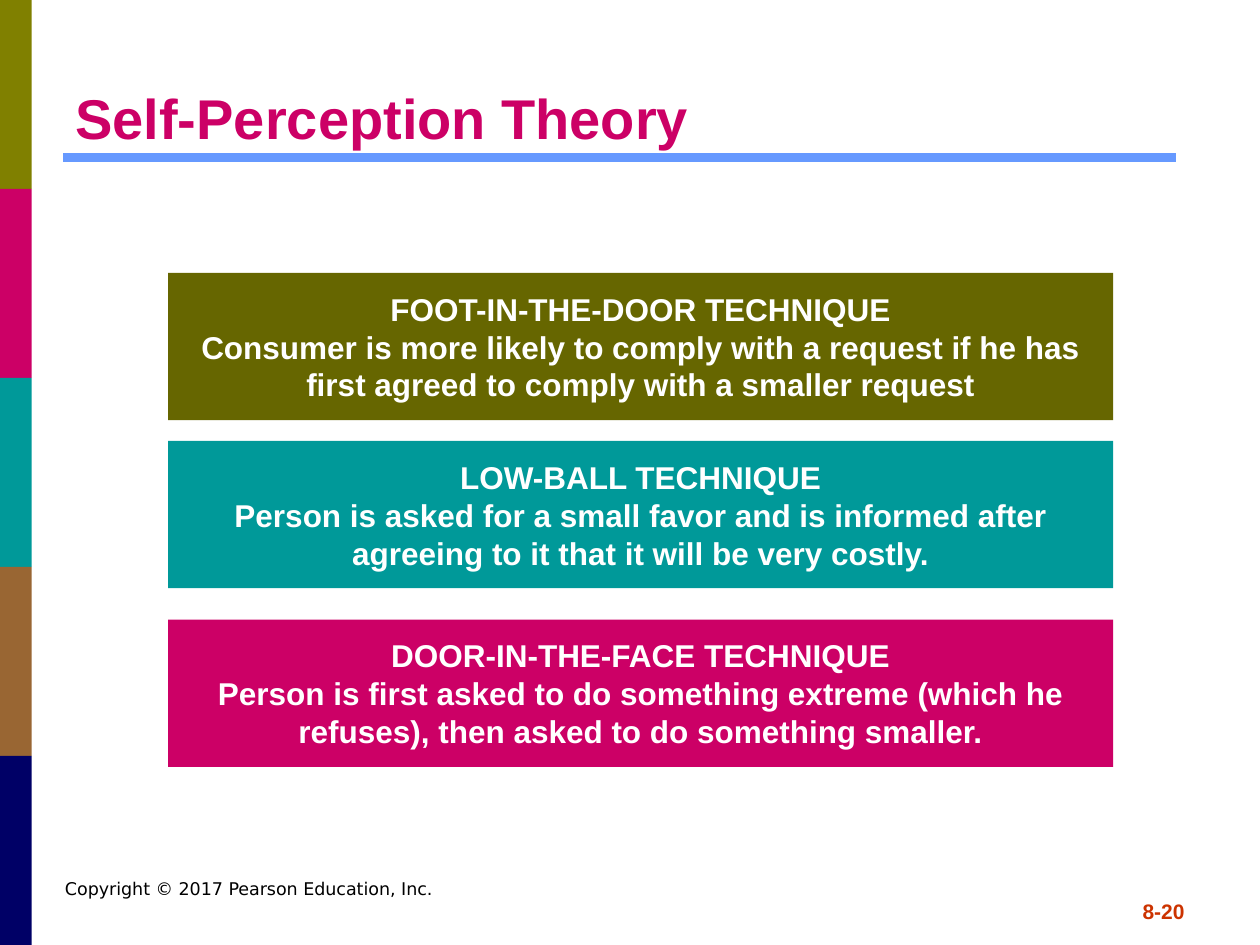
from lxml.etree import SubElement
from pptx import Presentation
from pptx.dml.color import RGBColor
from pptx.enum.shapes import MSO_CONNECTOR as CONN, MSO_SHAPE as SHAPE
from pptx.enum.text import MSO_ANCHOR as ANCHOR, PP_ALIGN as ALIGN
from pptx.oxml.ns import qn
from pptx.util import Cm, Pt

BANDS = ["808000", "CC0066", "009999", "996633", "000066"]
TECHNIQUES = [
    (5.5, "666600", "FOOT-IN-THE-DOOR TECHNIQUE",
     "Consumer is more likely to comply with a request if he has "
     "first agreed to comply with a smaller request"),
    (8.89, "009999", "LOW-BALL TECHNIQUE",
     "Person is asked for a small favor and is informed after "
     "agreeing to it that it will be very costly."),
    (12.49, "CC0066", "DOOR-IN-THE-FACE TECHNIQUE",
     "Person is first asked to do something extreme (which he "
     "refuses), then asked to do something smaller."),
]


def rgb(code):
    """Return the colour for a hex string."""
    return RGBColor.from_string(code)


def write(tf, lines, color, size, align=ALIGN.LEFT, name="Arial", bold=True, **frame):
    """Fill a text frame with one paragraph per line."""
    for key, value in {"word_wrap": True, **frame}.items():
        setattr(tf, key, value)
    for i, line in enumerate(lines):
        p = tf.paragraphs[0] if i == 0 else tf.add_paragraph()
        p.alignment = align
        r = p.add_run()
        r.text = line
        for key, value in {"name": name, "size": Pt(size), "bold": bold}.items():
            setattr(r.font, key, value)
        r.font.color.rgb = rgb(color)


def add_block(s, box, color):
    """Add a plain filled rectangle."""
    sp = s.shapes.add_shape(SHAPE.RECTANGLE, *map(Cm, box))
    sp.shadow.inherit = False
    sp.fill.solid()
    sp.fill.fore_color.rgb = rgb(color)
    sp.line.fill.background()
    return sp


def add_label(s, box, text, color, size, **style):
    """Add a text box with a single line."""
    sp = s.shapes.add_textbox(*map(Cm, box))
    write(sp.text_frame, [text], color, size, **style)


def add_rule(s, x1, x2, y, color, width):
    """Add a horizontal line."""
    sp = s.shapes.add_connector(CONN.STRAIGHT, Cm(x1), Cm(y), Cm(x2), Cm(y))
    sp.line.color.rgb = rgb(color)
    sp.line.width = Pt(width)
    SubElement(sp._element.spPr, qn("a:effectLst"))


def add_technique(s, top, color, heading, body):
    """Add a coloured panel with a heading and its description."""
    sp = add_block(s, (3.39, top, 19.05, 2.97), color)
    write(sp.text_frame, [heading, body], "FFFFFF", 18, ALIGN.CENTER,
          vertical_anchor=ANCHOR.MIDDLE, margin_left=Cm(0.25),
          margin_right=Cm(0.25), margin_top=Cm(0.64), margin_bottom=Cm(0.64))


def main():
    """Build and save the slide."""
    prs = Presentation()
    prs.slide_width, prs.slide_height = Cm(25.4), Cm(19.05)
    s = prs.slides.add_slide(prs.slide_layouts[6])
    add_rule(s, 1.27, 23.7, 3.18, "6699FF", 5)
    height = 19.05 / len(BANDS)
    for i, color in enumerate(BANDS):
        add_block(s, (0, i * height, 0.64, height), color)
    add_label(s, (1.27, 0.76, 22.86, 2.41), "Self-Perception Theory",
              "CC0066", 32, vertical_anchor=ANCHOR.BOTTOM)
    for technique in TECHNIQUES:
        add_technique(s, *technique)
    add_label(s, (1.06, 17.57, 16.09, 1.48), "Copyright © 2017 Pearson Education, Inc.",
              "000000", 10, name="DejaVu Sans", bold=False)
    add_label(s, (18.2, 17.99, 5.93, 0.64), "8-20", "CC3300", 12, align=ALIGN.RIGHT)
    prs.save("out.pptx")


if __name__ == "__main__":
    main()
